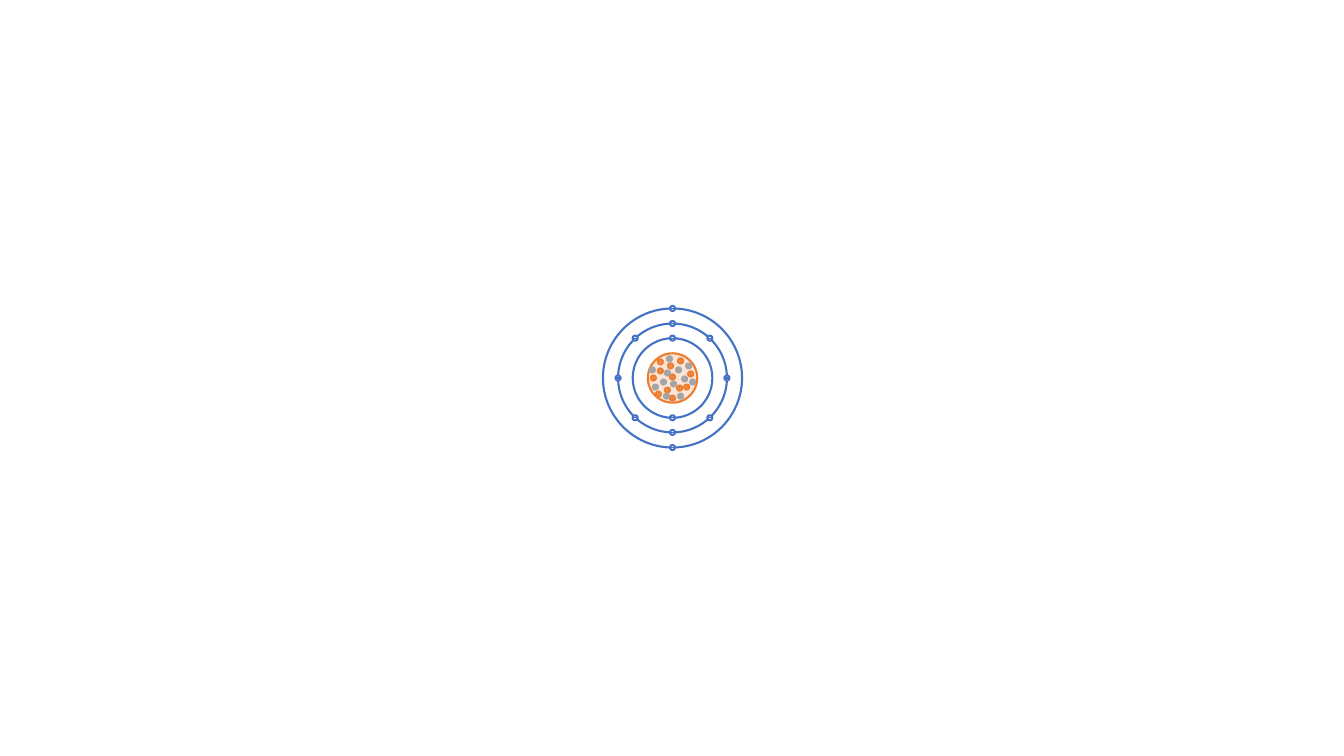
from pptx import Presentation
from pptx.dml.color import RGBColor
from pptx.enum.shapes import MSO_SHAPE as Shape
from pptx.util import Inches, Pt

COLORS = {
    "electron": "4472C4",
    "proton": "ED7D31",
    "neutron": "A5A5A5",
    "nucleus": "FBE5D6",
    "white": "FFFFFF",
}
CX, CY = 6.67, 3.75  # centre of the atom
DOT = 0.05  # diameter of every particle

# Particle centres, relative to the centre of the atom
PROTONS = [
    (-0.05, 0.12), (0.07, 0.1), (-0.14, 0.16), (0, 0.2),
    (0, -0.01), (0.14, 0.09), (0.18, -0.04), (-0.12, -0.07),
    (-0.02, -0.12), (-0.12, -0.16), (0.08, -0.17), (-0.19, 0),
]
NEUTRONS = [
    (0.2, 0.04), (-0.06, 0.18), (0.12, 0.01), (-0.09, 0.04),
    (0.06, -0.08), (0.16, -0.12), (-0.2, -0.08), (0.08, 0.18),
    (0.01, 0.06), (-0.17, 0.09), (-0.03, -0.19), (-0.05, -0.05),
]
INNER, MIDDLE, OUTER = 0.395, 0.54, 0.69  # shell radii
DIAGONAL_X, DIAGONAL_Y = 0.37, 0.395
ELECTRONS = [
    (0, -OUTER), (0, OUTER),
    (MIDDLE, 0), (-MIDDLE, 0),
    (-DIAGONAL_X, DIAGONAL_Y), (DIAGONAL_X, DIAGONAL_Y),
    (DIAGONAL_X, -DIAGONAL_Y), (-DIAGONAL_X, -DIAGONAL_Y),
    (0, -MIDDLE), (0, MIDDLE),
    (0, -INNER), (0, INNER),
]


def add_centred(atom, kind, dx, dy, size, fill=None, line=None):
    """Add a shape whose centre lies at an offset from the atom's centre."""
    sp = atom.shapes.add_shape(
        kind, Inches(CX + dx - size / 2), Inches(CY + dy - size / 2),
        Inches(size), Inches(size))
    sp.shadow.inherit = False
    if fill:
        sp.fill.solid()
        sp.fill.fore_color.rgb = RGBColor.from_string(COLORS[fill])
    else:
        sp.fill.background()
    if line:
        sp.line.color.rgb = RGBColor.from_string(COLORS[line])
        sp.line.width = Pt(1.5)
    else:
        sp.line.fill.background()
    return sp


def add_shell(atom, radius):
    add_centred(atom, Shape.OVAL, 0, 0, 2 * radius, line="electron")


def add_particles(atom, centres, color, fill=None, sign=None):
    for dx, dy in centres:
        add_centred(atom, Shape.OVAL, dx, dy, DOT, fill, color)
        if sign:
            add_centred(atom, sign, dx, dy, DOT, color)


def main():
    prs = Presentation()
    prs.slide_width, prs.slide_height = Inches(13.33), Inches(7.5)
    s = prs.slides.add_slide(prs.slide_layouts[6])
    atom = s.shapes.add_group_shape()

    # Inner shell and nucleus
    add_shell(atom, INNER)
    add_centred(atom, Shape.OVAL, 0, 0, 0.49, "nucleus", "proton")
    add_particles(atom, PROTONS, "proton", sign=Shape.MATH_PLUS)
    add_particles(atom, NEUTRONS, "neutron", fill="neutron")

    # Outer shells and electrons
    add_shell(atom, MIDDLE)
    add_shell(atom, OUTER)
    add_particles(atom, ELECTRONS, "electron", "white", Shape.MATH_MINUS)

    prs.save("out.pptx")


if __name__ == "__main__":
    main()
